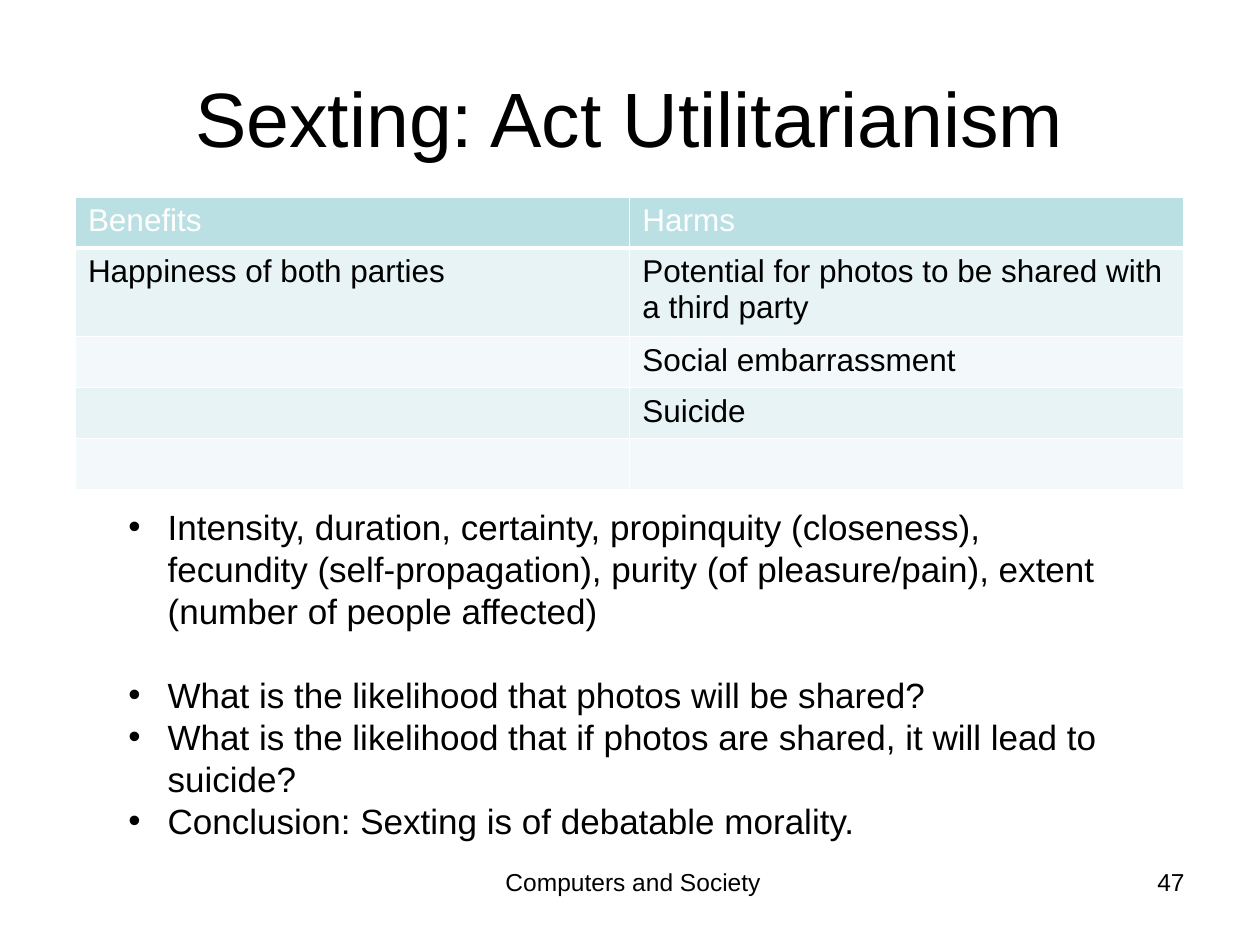
from dataclasses import dataclass

from lxml import etree
from pptx import Presentation
from pptx.dml.color import RGBColor
from pptx.enum.text import MSO_ANCHOR, PP_ALIGN
from pptx.oxml.ns import qn
from pptx.util import Cm, Pt

LEFT, CENTER, RIGHT = PP_ALIGN.LEFT, PP_ALIGN.CENTER, PP_ALIGN.RIGHT
TOP, MIDDLE = MSO_ANCHOR.TOP, MSO_ANCHOR.MIDDLE


@dataclass(frozen=True)
class Theme:
    """Colours, font and type sizes of the slide."""
    font: str = "Arial"
    text: str = "000000"
    light: str = "FFFFFF"
    header: str = "BBE0E3"
    bands: tuple = ("E7F3F4", "F3F9FA")
    title_size: int = 44
    table_size: int = 18
    body_size: int = 20
    footer_size: int = 14
    body_line: int = 24


THEME = Theme()

ROWS = [
    ("Benefits", "Harms"),
    ("Happiness of both parties",
     "Potential for photos to be shared with a third party"),
    ("", "Social embarrassment"),
    ("", "Suicide"),
    ("", ""),
]
CRITERIA = ("Intensity, duration, certainty, propinquity (closeness), "
            "fecundity (self-propagation), purity (of pleasure/pain), "
            "extent (number of people affected)")
QUESTIONS = [
    "What is the likelihood that photos will be shared?",
    "What is the likelihood that if photos are shared, it will lead to suicide?",
    "Conclusion: Sexting is of debatable morality.",
]


def style_runs(p, size, color=THEME.text):
    """Set font, size and colour on every run of a paragraph."""
    for r in p.runs:
        r.font.name = THEME.font
        r.font.size = Pt(size)
        r.font.color.rgb = RGBColor.from_string(color)


def add_text(s, box, lines, size, align=LEFT, anchor=TOP):
    """Add a wrapping text box with one paragraph per line."""
    tf = s.shapes.add_textbox(*map(Cm, box)).text_frame
    tf.word_wrap = True
    tf.vertical_anchor = anchor
    tf.text = "\n".join(lines)
    for p in tf.paragraphs:
        p.alignment = align
        style_runs(p, size)
    return tf


def set_borders(cell, bottom):
    """Draw light borders round a cell, with the given bottom width."""
    tc_pr = cell._tc.get_or_add_tcPr()
    widths = {"a:lnL": 1, "a:lnR": 1, "a:lnT": 1, "a:lnB": bottom}
    for i, (tag, width) in enumerate(widths.items()):
        ln = etree.Element(qn(tag), w=str(Pt(width)))
        fill = etree.SubElement(ln, qn("a:solidFill"))
        etree.SubElement(fill, qn("a:srgbClr"), val=THEME.light)
        tc_pr.insert(i, ln)


def add_comparison(s, box):
    """Add the table of benefits and harms with banded rows."""
    table = s.shapes.add_table(len(ROWS), len(ROWS[0]), *map(Cm, box)).table
    table.first_row = table.horz_banding = False
    for i, texts in enumerate(ROWS):
        is_header = i == 0
        fill = THEME.header if is_header else THEME.bands[(i - 1) % 2]
        color = THEME.light if is_header else THEME.text
        for j, text in enumerate(texts):
            cell = table.cell(i, j)
            cell.fill.solid()
            cell.fill.fore_color.rgb = RGBColor.from_string(fill)
            set_borders(cell, 3 if is_header else 1)
            if text:
                cell.text = text
                style_runs(cell.text_frame.paragraphs[0],
                           THEME.table_size, color)


def add_discussion(s, box):
    """Add the bulleted criteria, then the questions after a gap."""
    tf = add_text(s, box, [CRITERIA, *QUESTIONS], THEME.body_size)
    indent = Cm(0.79)
    for p in tf.paragraphs:
        p.line_spacing = Pt(THEME.body_line)
        p_pr = p._p.get_or_add_pPr()
        p_pr.set("marL", str(indent))
        p_pr.set("indent", str(-indent))
        etree.SubElement(p_pr, qn("a:buFont"), typeface=THEME.font)
        etree.SubElement(p_pr, qn("a:buChar"), char="•")
    tf.paragraphs[1].space_before = Pt(THEME.body_line)


def add_footer(s, box):
    """Add the centred course name and the page number on the right."""
    left, top, width, height = box
    number_width = 5.92
    add_text(s, (left + 6.2, top, 10.59, height), ["Computers and Society"],
             THEME.footer_size, CENTER)
    add_text(s, (left + width - number_width, top, number_width, height),
             ["47"], THEME.footer_size, RIGHT)


def main():
    """Build and save the slide."""
    prs = Presentation()
    prs.slide_width, prs.slide_height = Cm(25.4), Cm(19.05)
    s = prs.slides.add_slide(prs.slide_layouts[6])
    add_text(s, (1.27, 0.76, 22.86, 3.18), ["Sexting: Act Utilitarianism"],
             THEME.title_size, CENTER, MIDDLE)
    add_comparison(s, (1.52, 3.97, 22.35, 5.15))
    add_discussion(s, (2.34, 10.06, 20.19, 7.09))
    add_footer(s, (1.27, 17.35, 22.86, 1.32))
    prs.save("out.pptx")


if __name__ == "__main__":
    main()
